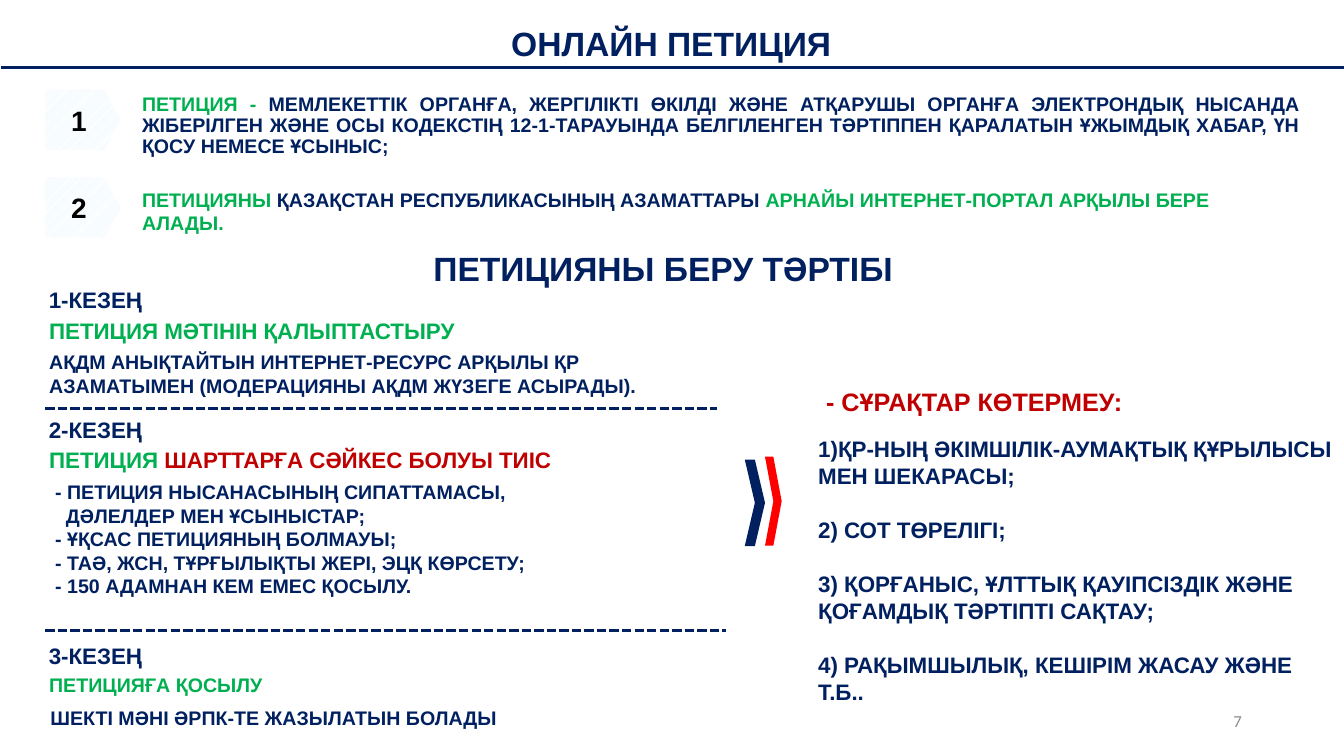
from lxml import etree
from pptx import Presentation
from pptx.dml.color import RGBColor
from pptx.enum.dml import MSO_LINE, MSO_PATTERN
from pptx.enum.shapes import MSO_CONNECTOR, MSO_SHAPE
from pptx.enum.text import MSO_ANCHOR, MSO_AUTO_SIZE, PP_ALIGN
from pptx.oxml.ns import qn
from pptx.util import Cm, Pt

NAVY = RGBColor(0x00, 0x20, 0x60)
GREEN = RGBColor(0x00, 0xB0, 0x50)
DARK_RED = RGBColor(0xC0, 0x00, 0x00)
RED = RGBColor(0xFF, 0x00, 0x00)
GRAY = RGBColor(0x8C, 0x8C, 0x8C)
BLACK = RGBColor(0x00, 0x00, 0x00)
WHITE = RGBColor(0xFF, 0xFF, 0xFF)
PALE_BLUE = RGBColor(0xD5, 0xF2, 0xFC)

LEFT = 1.14
BADGE_TOPS = (2.26, 4.47)


def write_paragraph(paragraph, runs, size, align=PP_ALIGN.LEFT, bold=True, font="Arial"):
    """Fill a paragraph with (text, colour) runs."""
    paragraph.alignment = align
    paragraph.font.name = font
    paragraph.font.size = Pt(size)
    paragraph.font.bold = bold
    for text, color in runs:
        run = paragraph.add_run()
        run.text = text
        run.font.color.rgb = color


def add_text(slide, box, paragraphs, size, wrap=True, anchor=MSO_ANCHOR.TOP,
             fit=MSO_AUTO_SIZE.SHAPE_TO_FIT_TEXT, **style):
    """Add a text box; each paragraph is a list of (text, colour) runs."""
    frame = slide.shapes.add_textbox(*map(Cm, box)).text_frame
    frame.word_wrap = wrap
    frame.auto_size = fit
    frame.vertical_anchor = anchor
    for index, runs in enumerate(paragraphs):
        paragraph = frame.add_paragraph() if index else frame.paragraphs[0]
        write_paragraph(paragraph, runs, size, **style)
    return frame.paragraphs


def add_title(slide, left, top, text):
    add_text(slide, (left, top, 33.83, 1.27), [[(text, NAVY)]], 24,
             anchor=MSO_ANCHOR.MIDDLE, align=PP_ALIGN.CENTER)


def add_rule(slide, left, right, y, dash=None):
    line = slide.shapes.add_connector(MSO_CONNECTOR.STRAIGHT, Cm(left), Cm(y), Cm(right), Cm(y))
    line.line.color.rgb = NAVY
    line.line.width = Pt(2.25)
    if dash:
        line.line.dash_style = dash
    etree.SubElement(line.element.spPr, qn("a:effectLst"))


def add_badge(slide, top, number):
    badge = slide.shapes.add_shape(MSO_SHAPE.PENTAGON, Cm(LEFT), Cm(top), Cm(1.91), Cm(1.52))
    badge.adjustments[0] = 0.27
    badge.shadow.inherit = False
    badge.line.fill.background()
    badge.fill.patterned()
    badge.fill.pattern = MSO_PATTERN.DARK_UPWARD_DIAGONAL
    badge.fill.fore_color.rgb = PALE_BLUE
    badge.fill.back_color.rgb = WHITE
    frame = badge.text_frame
    frame.margin_left = frame.margin_right = Cm(0.13)
    frame.margin_top = frame.margin_bottom = 0
    frame.vertical_anchor = MSO_ANCHOR.MIDDLE
    write_paragraph(frame.paragraphs[0], [(str(number), BLACK)], 20, PP_ALIGN.CENTER)


def add_chevron(slide, left, top, width, height, color):
    half, right = left + width / 2, left + width
    middle, bottom = top + height / 2, top + height
    outline = [(half, top), (right, middle), (half, bottom), (left, bottom), (half, middle)]
    builder = slide.shapes.build_freeform(Cm(left), Cm(top))
    builder.add_line_segments([(Cm(x), Cm(y)) for x, y in outline], close=True)
    chevron = builder.convert_to_shape()
    chevron.shadow.inherit = False
    chevron.fill.solid()
    chevron.fill.fore_color.rgb = color
    chevron.line.fill.background()


def add_stage(slide, number, top, topic, topic_size, topic_width, lines, body_left, body_height):
    """Add a stage heading, its topic and its description."""
    add_text(slide, (0.98, top, 2.9, 0.94), [[(f"{number}-КЕЗЕҢ", NAVY)]], 16, wrap=False)
    add_text(slide, (0.99, top + 0.77, topic_width, 0.94), [topic], topic_size, wrap=False)
    return add_text(slide, (body_left, top + 1.61, 16.8, body_height),
                    [[(line, NAVY)] for line in lines], 14)


def add_definitions(slide):
    definition = add_text(slide, (3.33, BADGE_TOPS[0], 29.69, 1.88), [[
        ("ПЕТИЦИЯ - ", GREEN),
        ("МЕМЛЕКЕТТІК ОРГАНҒА, ЖЕРГIЛIКТI ӨКIЛДI ЖӘНЕ АТҚАРУШЫ ОРГАНҒА ЭЛЕКТРОНДЫҚ "
         "НЫСАНДА ЖІБЕРІЛГЕН ЖӘНЕ ОСЫ КОДЕКСТІҢ 12-1-ТАРАУЫНДА БЕЛГІЛЕНГЕН ТӘРТІППЕН "
         "ҚАРАЛАТЫН ҰЖЫМДЫҚ ХАБАР, ҮН ҚОСУ НЕМЕСЕ ҰСЫНЫС;", NAVY),
    ]], 14, align=PP_ALIGN.JUSTIFY)[0]
    definition.line_spacing = 0.9
    definition.space_before = definition.space_after = Pt(6)
    add_text(slide, (3.33, 4.6, 28.78, 1.45), [[
        ("ПЕТИЦИЯНЫ ", GREEN),
        ("ҚАЗАҚСТАН РЕСПУБЛИКАСЫНЫҢ АЗАМАТТАРЫ ", NAVY),
        ("АРНАЙЫ ИНТЕРНЕТ-ПОРТАЛ АРҚЫЛЫ БЕРЕ АЛАДЫ.", GREEN),
    ]], 14)
    for number, top in enumerate(BADGE_TOPS, 1):
        add_badge(slide, top, number)


def add_stages(slide):
    add_stage(slide, 1, 7.09, [("ПЕТИЦИЯ МӘТІНІН ҚАЛЫПТАСТЫРУ", GREEN)], 16, 10.87,
              ["АҚДМ АНЫҚТАЙТЫН ИНТЕРНЕТ-РЕСУРС АРҚЫЛЫ ҚР АЗАМАТЫМЕН "
               "(МОДЕРАЦИЯНЫ АҚДМ ЖҮЗЕГЕ АСЫРАДЫ)."], 0.99, 1.45)
    conditions = add_stage(
        slide, 2, 10.36,
        [("ПЕТИЦИЯ ", GREEN), ("ШАРТТАРҒА СӘЙКЕС БОЛУЫ ТИІС", DARK_RED)], 16, 13.34,
        ["- ПЕТИЦИЯ НЫСАНАСЫНЫҢ СИПАТТАМАСЫ,",
         "ДӘЛЕЛДЕР МЕН ҰСЫНЫСТАР;",
         "- ҰҚСАС ПЕТИЦИЯНЫҢ БОЛМАУЫ;",
         "- ТАӘ, ЖСН, ТҰРҒЫЛЫҚТЫ ЖЕРІ, ЭЦҚ КӨРСЕТУ;",
         "- 150 АДАМНАН КЕМ ЕМЕС ҚОСЫЛУ."], LEFT, 3.25)
    # Continuation line of the first condition
    conditions[1]._p.get_or_add_pPr().set("marL", str(Cm(0.27)))
    add_stage(slide, 3, 16.05, [("ПЕТИЦИЯҒА ҚОСЫЛУ", GREEN)], 14, 5.94,
              ["ШЕКТІ МӘНІ ӘРПК-ТЕ ЖАЗЫЛАТЫН БОЛАДЫ"], 1.02, 0.86)
    add_rule(slide, LEFT, 18.08, 10.29, MSO_LINE.SQUARE_DOT)
    add_rule(slide, LEFT, 18.29, 15.88, MSO_LINE.SQUARE_DOT)


def add_excluded_topics(slide):
    add_text(slide, (20.57, 9.6, 8.05, 1.02), [[("- СҰРАҚТАР КӨТЕРМЕУ:", DARK_RED)]], 18,
             wrap=False)
    topics = ["ҚР-НЫҢ ӘКІМШІЛІК-АУМАҚТЫҚ ҚҰРЫЛЫСЫ МЕН ШЕКАРАСЫ;",
              "2) СОТ ТӨРЕЛІГІ;",
              "3) ҚОРҒАНЫС, ҰЛТТЫҚ ҚАУІПСІЗДІК ЖӘНЕ ҚОҒАМДЫҚ ТӘРТІПТІ САҚТАУ;",
              "4) РАҚЫМШЫЛЫҚ, КЕШІРІМ ЖАСАУ ЖӘНЕ Т.Б.."]
    first, *others = add_text(slide, (20.37, 10.85, 13.49, 7.09),
                              [[(topic, NAVY)] for topic in topics], 16)
    for paragraph in others:
        paragraph.space_before = Pt(19.3)
    # Automatic number on the first topic
    numbering = etree.Element(qn("a:buAutoNum"), type="arabicParenR")
    first._p.get_or_add_pPr().insert(0, numbering)


def main():
    presentation = Presentation()
    presentation.slide_width = Cm(33.87)
    presentation.slide_height = Cm(19.05)
    slide = presentation.slides.add_slide(presentation.slide_layouts[6])

    # Header and definitions
    add_title(slide, 0, 0.46, "ОНЛАЙН ПЕТИЦИЯ")
    add_rule(slide, 0.03, 33.87, 1.7)
    add_definitions(slide)

    # Procedure: stages, arrows, excluded topics
    add_title(slide, -0.2, 6.12, "ПЕТИЦИЯНЫ БЕРУ ТӘРТІБІ")
    add_stages(slide)
    add_chevron(slide, 18.77, 11.58, 0.51, 2.18, NAVY)
    add_chevron(slide, 19.28, 11.51, 0.42, 2.24, RED)
    add_excluded_topics(slide)

    # Slide number
    add_text(slide, (23.93, 17.65, 7.62, 1.02), [[("7", GRAY)]], 12, fit=MSO_AUTO_SIZE.NONE,
             anchor=MSO_ANCHOR.MIDDLE, align=PP_ALIGN.RIGHT, bold=False, font="Calibri")

    presentation.save("out.pptx")


if __name__ == "__main__":
    main()
